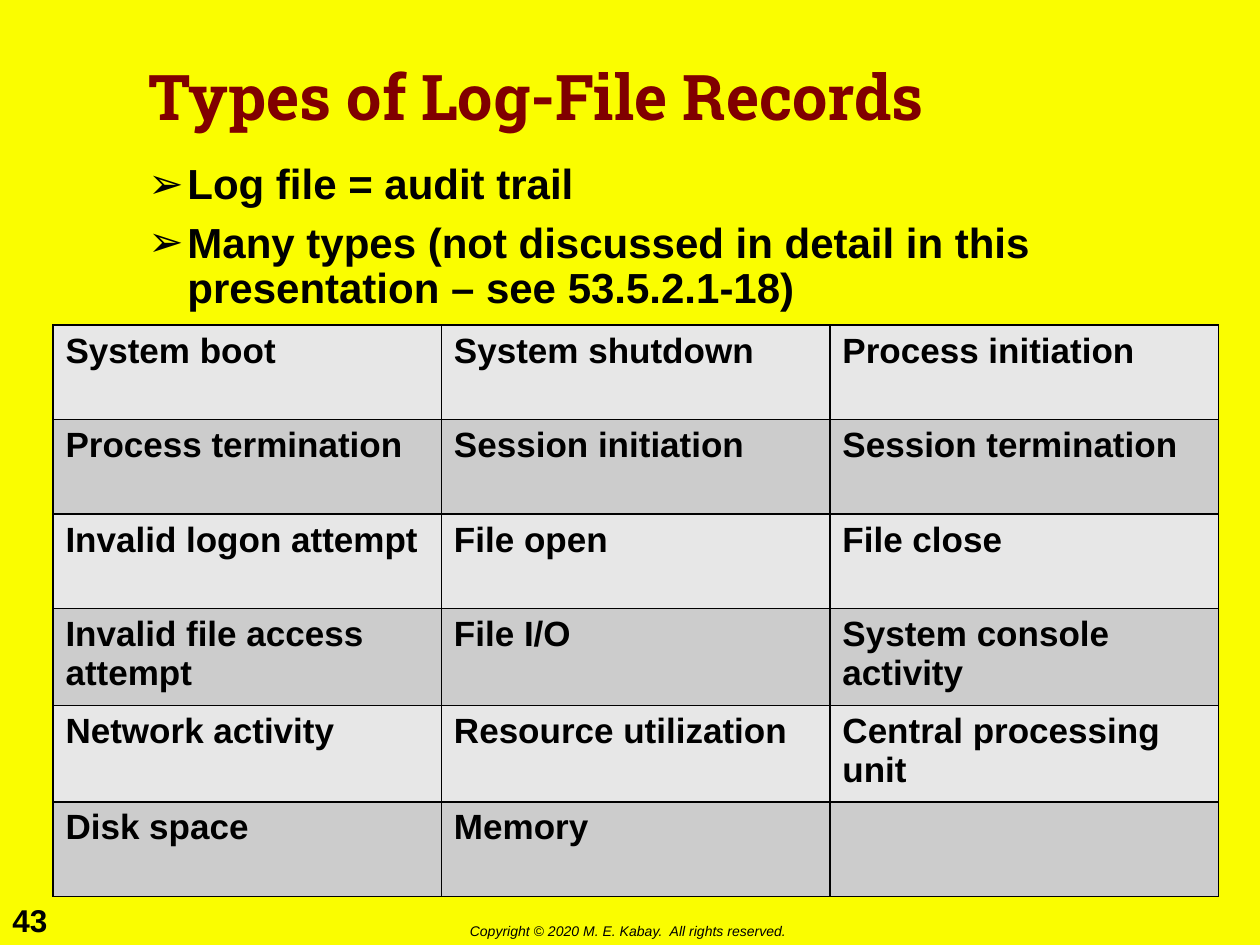
from lxml import etree
from pptx import Presentation
from pptx.dml.color import RGBColor
from pptx.enum.text import MSO_ANCHOR, PP_ALIGN
from pptx.oxml.ns import qn
from pptx.util import Inches, Pt

LEFT = PP_ALIGN.LEFT
TOP, MIDDLE = MSO_ANCHOR.TOP, MSO_ANCHOR.MIDDLE

YELLOW = RGBColor(0xFA, 0xFD, 0x00)
MAROON = RGBColor(0x80, 0x00, 0x00)
BLACK = RGBColor(0x00, 0x00, 0x00)
ROW_FILLS = (RGBColor(0xE7, 0xE7, 0xE7), RGBColor(0xCC, 0xCC, 0xCC))

# Content
TITLE = "Types of Log-File Records"
BULLETS = [
    "Log file = audit trail",
    "Many types (not discussed in detail in this presentation – see 53.5.2.1-18)",
]
RECORD_TYPES = [
    ("System boot", "System shutdown", "Process initiation"),
    ("Process termination", "Session initiation", "Session termination"),
    ("Invalid logon attempt", "File open", "File close"),
    ("Invalid file access attempt", "File I/O", "System console activity"),
    ("Network activity", "Resource utilization", "Central processing unit"),
    ("Disk space", "Memory", ""),
]
PAGE_NUMBER = "43"
COPYRIGHT = "Copyright © 2020 M. E. Kabay.  All rights reserved."


def add_bullet(paragraph, character, indent):
    properties = paragraph._p.get_or_add_pPr()
    properties.set("marL", str(indent))
    properties.set("indent", str(-indent))
    color = etree.SubElement(properties, qn("a:buClr"))
    etree.SubElement(color, qn("a:srgbClr"), val=str(BLACK))
    etree.SubElement(properties, qn("a:buFont"), typeface="Arial")
    etree.SubElement(properties, qn("a:buChar"), char=character)


def write_text(frame, lines, size, font="Arial", color=BLACK, bold=False, italic=False,
               wrap=True, anchor=TOP, line_spacing=None, gap=None, bullet=None):
    frame.word_wrap = wrap
    frame.vertical_anchor = anchor
    for index, line in enumerate(lines):
        paragraph = frame.add_paragraph() if index else frame.paragraphs[0]
        if bullet:
            add_bullet(paragraph, bullet, Inches(0.31))
        paragraph.alignment = LEFT
        if line_spacing:
            paragraph.line_spacing = line_spacing
        if gap and index:
            paragraph.space_before = Pt(gap)
        run = paragraph.add_run()
        run.text = line
        run.font.name = font
        run.font.size = Pt(size)
        run.font.bold = bold
        run.font.italic = italic
        run.font.color.rgb = color


def set_borders(cell, color, width):
    properties = cell._tc.get_or_add_tcPr()
    for index, side in enumerate(("lnL", "lnR", "lnT", "lnB")):
        line = etree.Element(qn(f"a:{side}"), w=str(Pt(width)))
        fill = etree.SubElement(line, qn("a:solidFill"))
        etree.SubElement(fill, qn("a:srgbClr"), val=str(color))
        properties.insert(index, line)


def place(shape, left, top, width, height):
    shape.left, shape.top = Inches(left), Inches(top)
    shape.width, shape.height = Inches(width), Inches(height)


def add_text_box(slide, box, lines, **text_format):
    text_box = slide.shapes.add_textbox(*(Inches(value) for value in box))
    write_text(text_box.text_frame, lines, **text_format)


def add_record_table(slide):
    rows, columns = len(RECORD_TYPES), len(RECORD_TYPES[0])
    table = slide.shapes.add_table(rows, columns, Inches(0.42), Inches(2.58),
                                   Inches(9.25), Inches(4.5)).table
    table.first_row = False
    table.horz_banding = False
    for row, labels in enumerate(RECORD_TYPES):
        for column, label in enumerate(labels):
            cell = table.cell(row, column)
            cell.fill.solid()
            cell.fill.fore_color.rgb = ROW_FILLS[row % 2]
            set_borders(cell, BLACK, 1)
            if label:
                write_text(cell.text_frame, [label], size=20, bold=True)


def main():
    presentation = Presentation()
    presentation.slide_width = Inches(10)
    presentation.slide_height = Inches(7.5)
    slide = presentation.slides.add_slide(presentation.slide_layouts[5])
    slide.background.fill.solid()
    slide.background.fill.fore_color.rgb = YELLOW

    # Footer
    add_text_box(slide, (0, 7.1, 0.51, 0.4), [PAGE_NUMBER], size=18, bold=True, wrap=False)
    add_text_box(slide, (3.63, 7.27, 2.82, 0.24), [COPYRIGHT], size=8, italic=True, wrap=False)

    # Title and bullets
    title = slide.shapes.title
    place(title, 1.08, 0.17, 7.83, 1.25)
    write_text(title.text_frame, [TITLE], size=36, font="Roboto Slab", color=MAROON,
               bold=True, anchor=MIDDLE, line_spacing=0.9)
    add_text_box(slide, (1.08, 1.25, 7.83, 1.5), BULLETS, size=24, bold=True,
                 line_spacing=0.9, gap=7.5, bullet="➢")

    # Table of record types
    add_record_table(slide)
    presentation.save("out.pptx")


if __name__ == "__main__":
    main()
